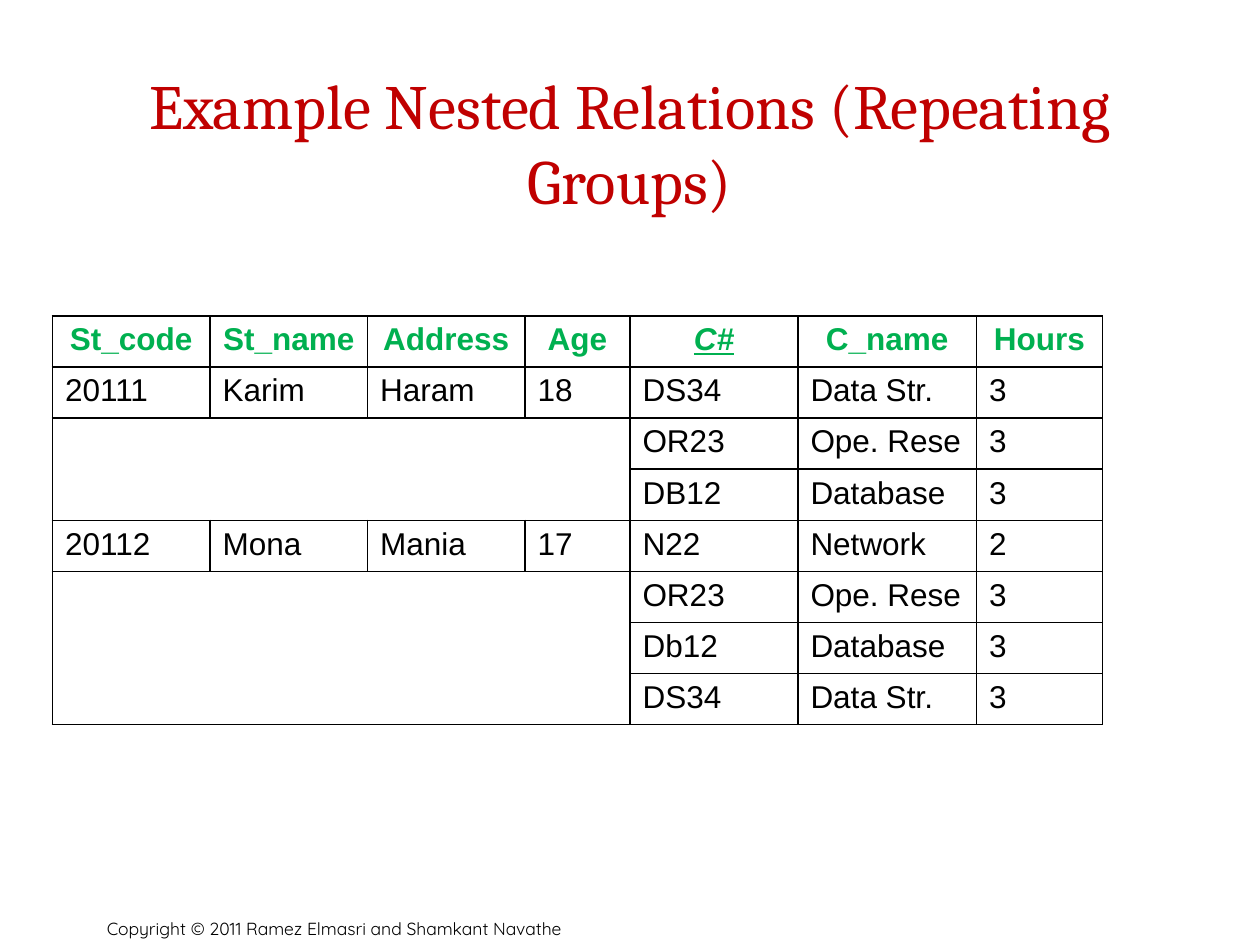
"""Build a slide showing a nested relation of students and their courses."""
from dataclasses import dataclass

from lxml.etree import SubElement
from pptx import Presentation
from pptx.dml.color import RGBColor
from pptx.enum.text import MSO_ANCHOR as Anchor, PP_ALIGN as Align
from pptx.oxml.ns import qn
from pptx.util import Pt

BLACK = RGBColor(0x00, 0x00, 0x00)
RED = RGBColor(0xC0, 0x00, 0x00)
GREEN = RGBColor(0x00, 0xB0, 0x50)

HEADINGS = ("St_code", "St_name", "Address", "Age", "C#", "C_name", "Hours")
KEY_HEADING = "C#"
COLUMN_WIDTHS = (90, 90, 90, 60, 96, 102, 72)
ROW_HEIGHT = 29.2
TABLE_LEFT, TABLE_TOP = 30, 180.5


@dataclass(frozen=True)
class Course:
    code: str
    name: str
    hours: str


@dataclass(frozen=True)
class Student:
    details: tuple[str, ...]
    courses: tuple[Course, ...]


STUDENTS = (
    Student(
        ("20111", "Karim", "Haram", "18"),
        (
            Course("DS34", "Data Str.", "3"),
            Course("OR23", "Ope. Rese", "3"),
            Course("DB12", "Database", "3"),
        ),
    ),
    Student(
        ("20112", "Mona", "Mania", "17"),
        (
            Course("N22", "Network", "2"),
            Course("OR23", "Ope. Rese", "3"),
            Course("Db12", "Database", "3"),
            Course("DS34", "Data Str.", "3"),
        ),
    ),
)


def write(frame, text: str, *, font="Arial", size=18, color=BLACK, align=Align.LEFT,
          bold=False, italic=False, underline=False) -> None:
    paragraph = frame.paragraphs[0]
    paragraph.alignment = align
    run = paragraph.add_run()
    run.text = text
    run.font.name = font
    run.font.size = Pt(size)
    run.font.color.rgb = color
    run.font.bold = bold
    run.font.italic = italic
    run.font.underline = underline


def add_text(slide, box: tuple[float, ...], text: str, *, anchor: Anchor,
             margins: tuple[float, float], **style) -> None:
    frame = slide.shapes.add_textbox(*map(Pt, box)).text_frame
    frame.word_wrap = True
    frame.vertical_anchor = anchor
    frame.margin_left = frame.margin_right = Pt(margins[0])
    frame.margin_top = frame.margin_bottom = Pt(margins[1])
    write(frame, text, **style)


def outline(cell) -> None:
    properties = cell._tc.get_or_add_tcPr()
    for edge in ("a:lnL", "a:lnR", "a:lnT", "a:lnB"):
        line = SubElement(properties, qn(edge), w=str(Pt(1)))
        fill = SubElement(line, qn("a:solidFill"))
        SubElement(fill, qn("a:srgbClr"), val=str(BLACK))
    cell.fill.background()


def add_relation(slide, students: tuple[Student, ...]) -> None:
    row_count = 1 + sum(len(student.courses) for student in students)
    relation = slide.shapes.add_table(
        row_count, len(HEADINGS), Pt(TABLE_LEFT), Pt(TABLE_TOP),
        Pt(sum(COLUMN_WIDTHS)), Pt(row_count * ROW_HEIGHT),
    ).table
    relation.first_row = relation.horz_banding = False
    for column, width in zip(relation.columns, COLUMN_WIDTHS):
        column.width = Pt(width)
    for row in relation.rows:
        row.height = Pt(ROW_HEIGHT)
    for cell in relation.iter_cells():
        outline(cell)

    for column, heading in enumerate(HEADINGS):
        is_key = heading == KEY_HEADING
        write(relation.cell(0, column).text_frame, heading, color=GREEN,
              align=Align.CENTER, bold=True, italic=is_key, underline=is_key)

    first = 1
    for student in students:
        detail_count = len(student.details)
        last = first + len(student.courses) - 1
        for column, detail in enumerate(student.details):
            write(relation.cell(first, column).text_frame, detail)
        for row, course in enumerate(student.courses, first):
            values = (course.code, course.name, course.hours)
            for column, value in enumerate(values, detail_count):
                write(relation.cell(row, column).text_frame, value)
        relation.cell(first + 1, 0).merge(relation.cell(last, detail_count - 1))
        first = last + 1


def main() -> None:
    deck = Presentation()
    deck.slide_width, deck.slide_height = Pt(720), Pt(540)
    slide = deck.slides.add_slide(deck.slide_layouts[6])
    add_text(slide, (54, 516, 515.5, 24),
             "Copyright © 2011 Ramez Elmasri and Shamkant Navathe",
             anchor=Anchor.BOTTOM, margins=(7.2, 3.6), font="Quicksand", size=10)
    add_text(slide, (36, 36, 648, 90), "Example Nested Relations (Repeating Groups)",
             anchor=Anchor.MIDDLE, margins=(0, 0), font="Cambria", size=36,
             color=RED, align=Align.CENTER)
    add_relation(slide, STUDENTS)
    deck.save("out.pptx")


if __name__ == "__main__":
    main()
